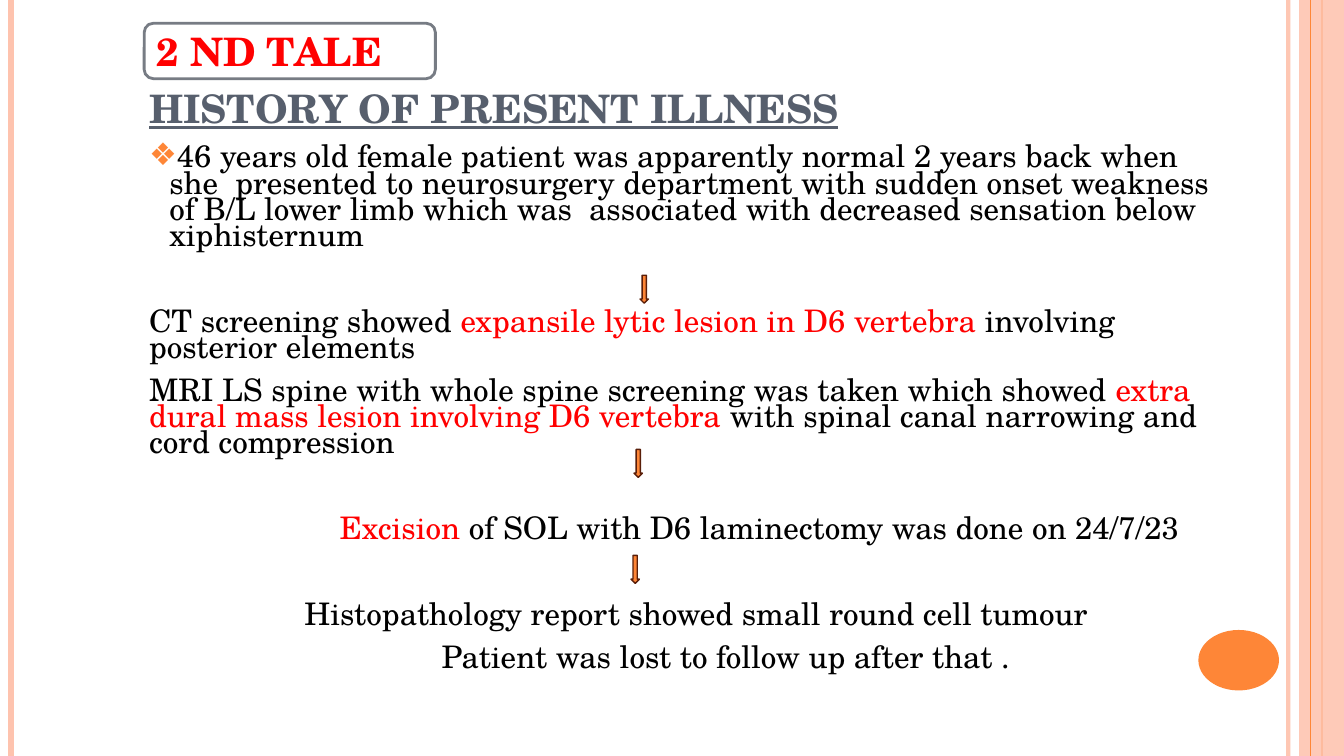
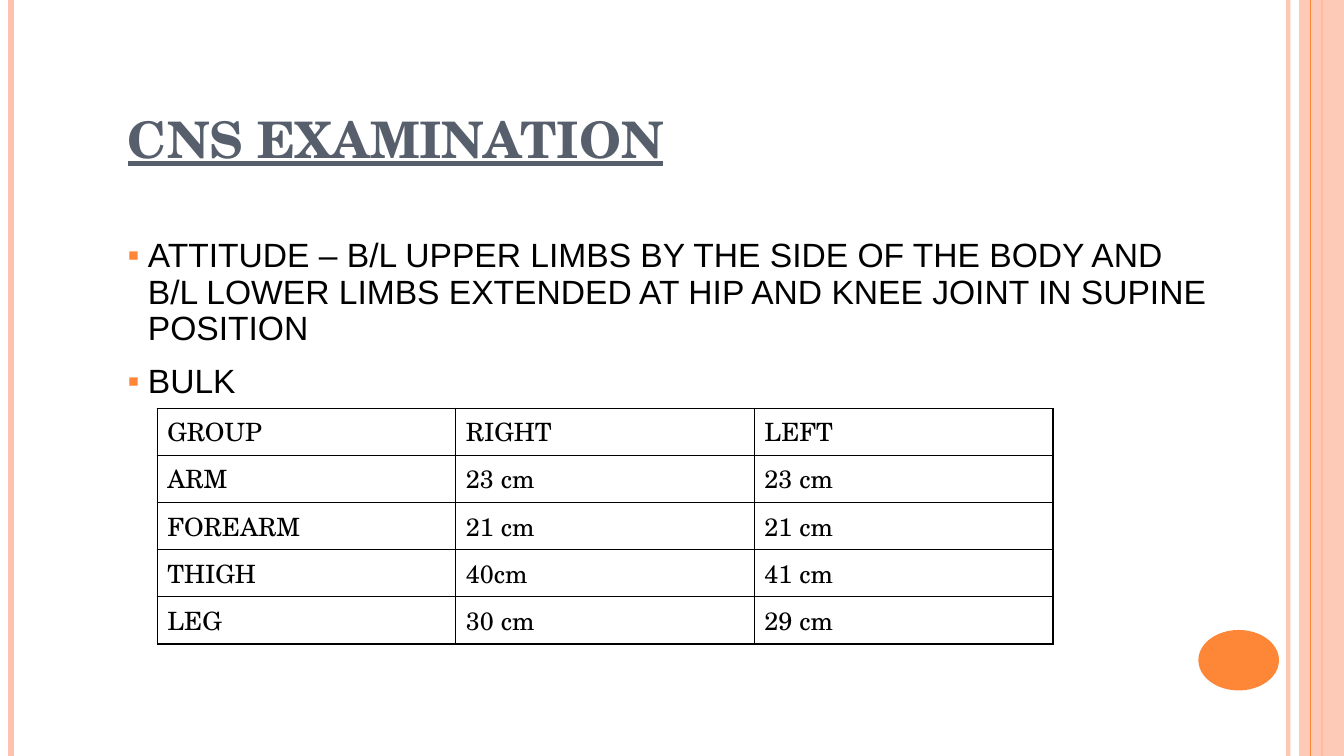
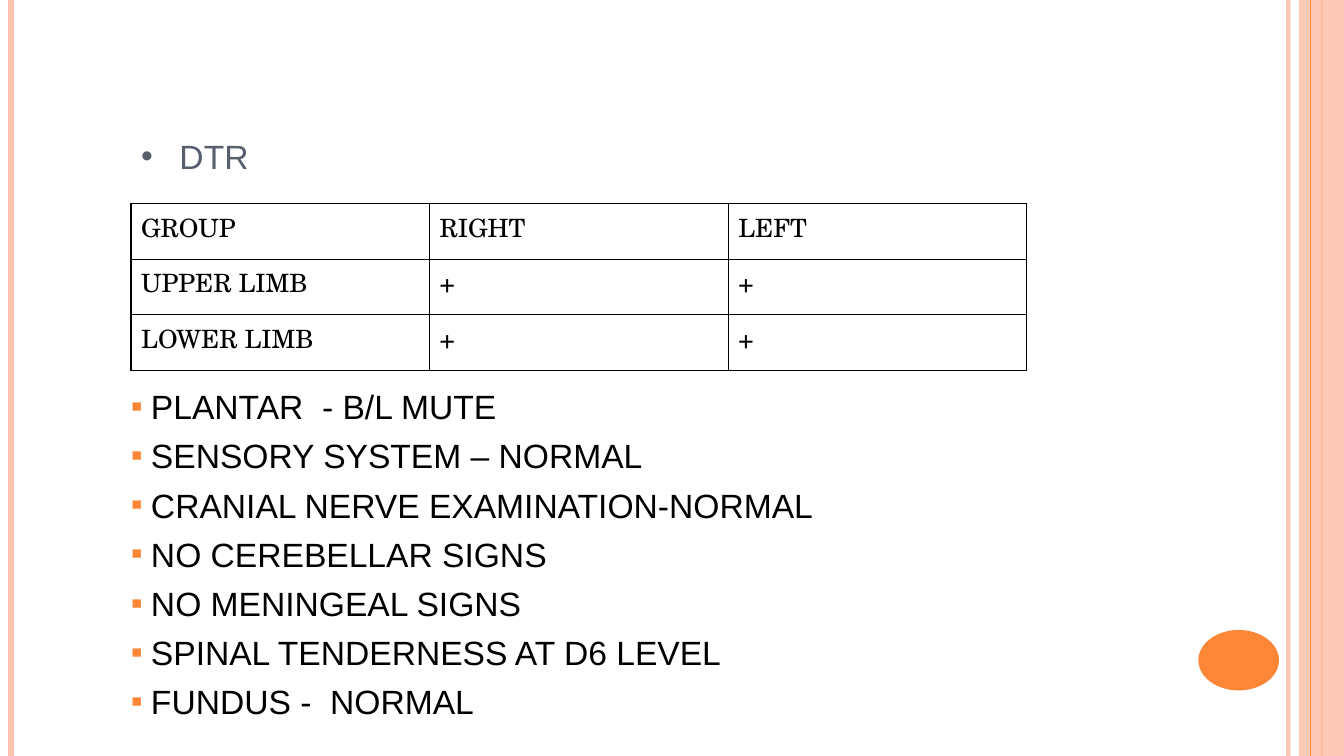
from dataclasses import dataclass

from lxml import etree
from pptx import Presentation
from pptx.dml.color import RGBColor
from pptx.enum import shapes, text
from pptx.oxml import ns
from pptx.util import Pt

SERIF, SANS = "TeX Gyre Schola", "Arial"
ORANGE, PEACH, BROWN = "FE8637", "FEC3AE", "591E09"
SLATE, GREY = "575F6D", "777C84"
BLACK, WHITE, RED = "000000", "FFFFFF", "FF0000"
WIDTH, HEIGHT = 960, 540


@dataclass
class Box:
    x: float
    y: float
    w: float
    h: float


@dataclass
class Rule:
    x: float
    color: str
    width: float
    alpha: int = 100


@dataclass
class Style:
    font: str
    size: float
    color: str = BLACK
    bold: bool = False
    underline: bool = False
    spacing: float = 1.0


@dataclass
class Para:
    runs: list[tuple[str, str]]
    before: float = 12
    indent: float = 0
    bullet: str = ""
    bullet_color: str = ORANGE


RULES = [
    Rule(920.2, PEACH, 3, 93),
    Rule(8, PEACH, 4.5),
    Rule(944, ORANGE, 1.5),
    Rule(936, ORANGE, 0.75),
]
BAND = Box(928, 0, 32, HEIGHT)
DISC = Box(856, 450, 57.6, 43.2)


def rgb(value: str) -> RGBColor:
    return RGBColor.from_string(value)


def sub(parent, tag: str, **attrs: str):
    return etree.SubElement(parent, ns.qn(tag), **attrs)


def set_alpha(sp, percent: int) -> None:
    for clr in sp._element.spPr.iter(ns.qn("a:srgbClr")):
        sub(clr, "a:alpha", val=str(percent * 1000))


def add_shape(s, kind, box: Box, fill: str, line: str = "", width: float = 1):
    sp = s.shapes.add_shape(kind, Pt(box.x), Pt(box.y), Pt(box.w), Pt(box.h))
    sp.shadow.inherit = False
    sp.fill.solid()
    sp.fill.fore_color.rgb = rgb(fill)
    if line:
        sp.line.color.rgb = rgb(line)
        sp.line.width = Pt(width)
    else:
        sp.line.fill.background()
    return sp


def add_rule(s, rule: Rule) -> None:
    ln = s.shapes.add_connector(
        shapes.MSO_CONNECTOR.STRAIGHT, Pt(rule.x), Pt(0), Pt(rule.x), Pt(HEIGHT))
    ln.line.color.rgb = rgb(rule.color)
    ln.line.width = Pt(rule.width)
    if rule.alpha < 100:
        set_alpha(ln, rule.alpha)
    sub(ln._element.spPr, "a:effectLst")


def add_frame(s) -> None:
    for rule in RULES[:3]:
        add_rule(s, rule)
    band = add_shape(s, shapes.MSO_SHAPE.RECTANGLE, BAND, PEACH)
    set_alpha(band, 87)
    add_rule(s, RULES[3])
    add_shape(s, shapes.MSO_SHAPE.OVAL, DISC, ORANGE)


def format_paragraph(p, style: Style) -> None:
    p.alignment = text.PP_ALIGN.LEFT
    p.line_spacing = style.spacing
    p.font.name = style.font
    p.font.size = Pt(style.size)
    p.font.bold = style.bold
    p.font.underline = style.underline
    p.font.color.rgb = rgb(style.color)


def write(tf, paras: list[Para], style: Style) -> None:
    tf.word_wrap = True
    tf.auto_size = text.MSO_AUTO_SIZE.NONE
    for i, para in enumerate(paras):
        p = tf.add_paragraph() if i else tf.paragraphs[0]
        p.space_before = Pt(para.before if i else 0)
        pPr = p._p.get_or_add_pPr()
        pPr.set("marL", str(Pt(para.indent)))
        if para.bullet:
            pPr.set("indent", str(-Pt(para.indent)))
            sub(sub(pPr, "a:buClr"), "a:srgbClr", val=para.bullet_color)
            sub(pPr, "a:buFont", typeface=SANS)
            sub(pPr, "a:buChar", char=para.bullet)
        else:
            pPr.set("indent", "0")
            sub(pPr, "a:buNone")
        format_paragraph(p, style)
        for words, color in para.runs:
            r = p.add_run()
            r.text = words
            if color != style.color:
                r.font.color.rgb = rgb(color)


def add_slide(prs, box: Box, title: Para, style: Style):
    s = prs.slides.add_slide(prs.slide_layouts[5])
    add_frame(s)
    sp = s.shapes.title
    sp.left, sp.top, sp.width, sp.height = Pt(box.x), Pt(box.y), Pt(box.w), Pt(box.h)
    write(sp.text_frame, [title], style)
    sp.text_frame.vertical_anchor = text.MSO_ANCHOR.MIDDLE
    return s


def add_body(s, box: Box, paras: list[Para], style: Style) -> None:
    sp = s.shapes.add_textbox(Pt(box.x), Pt(box.y), Pt(box.w), Pt(box.h))
    write(sp.text_frame, paras, style)


def square_bullets(lines: list[str]) -> list[Para]:
    return [Para([(line, BLACK)], indent=14.4, bullet="▪") for line in lines]


def add_table(s, x: float, y: float, row_h: float, rows: list[list[str]]) -> None:
    col_w = 213.3
    cols = len(rows[0])
    table = s.shapes.add_table(
        len(rows), cols, Pt(x), Pt(y), Pt(col_w * cols), Pt(row_h * len(rows))).table
    table.first_row = table.horz_banding = False
    for col in table.columns:
        col.width = Pt(col_w)
    for row, values in zip(table.rows, rows):
        row.height = Pt(row_h)
        for cell, value in zip(row.cells, values):
            tcPr = cell._tc.get_or_add_tcPr()
            for side in ("a:lnL", "a:lnR", "a:lnT", "a:lnB"):
                ln = sub(tcPr, side, w=str(Pt(1)))
                sub(sub(ln, "a:solidFill"), "a:srgbClr", val=BLACK)
            cell.fill.background()
            cell.text = value
            format_paragraph(cell.text_frame.paragraphs[0], Style(SERIF, 18))


def history_slide(prs) -> None:
    s = add_slide(prs, Box(99.4, 56.2, 602, 45.4),
                  Para([("HISTORY OF PRESENT ILLNESS", SLATE)]),
                  Style(SERIF, 28, SLATE, True, True, 0.9))
    step = 42.8
    paras = [
        Para([("46 years old female patient was apparently normal 2 years back when "
               "she  presented to neurosurgery department with sudden onset weakness "
               "of B/L lower limb which was  associated with decreased sensation below "
               "xiphisternum", BLACK)], indent=14.4, bullet="❖"),
        Para([("CT screening showed ", BLACK),
              ("expansile lytic lesion in D6 vertebra ", RED),
              ("involving posterior elements", BLACK)], before=step),
        Para([("MRI LS spine with whole spine screening was taken which showed ", BLACK),
              ("extra dural mass lesion involving D6 vertebra ", RED),
              ("with spinal canal narrowing and cord compression", BLACK)]),
        Para([("Excision ", RED),
              ("of SOL with D6 laminectomy was done on 24/7/23", BLACK)],
             before=step, indent=136),
        Para([("Histopathology report showed small round cell tumour", BLACK)],
             before=step, indent=111),
        Para([("Patient was lost to follow up after that .", BLACK)], indent=209),
    ]
    add_body(s, Box(99.4, 101.5, 790.6, 412.6), paras, Style(SERIF, 22.2, spacing=0.7))
    for x, y in ((457.2, 196.6), (452.9, 321), (450.7, 396.7)):
        add_shape(s, shapes.MSO_SHAPE.DOWN_ARROW, Box(x, y, 6, 20), ORANGE, BROWN)
    label = add_shape(s, shapes.MSO_SHAPE.ROUNDED_RECTANGLE,
                      Box(103, 16.6, 208, 39.6), WHITE, GREY, 2)
    write(label.text_frame, [Para([("2 ND TALE", RED)])], Style(SERIF, 28, RED, True))
    label.text_frame.vertical_anchor = text.MSO_ANCHOR.MIDDLE


def examination_slide(prs) -> None:
    s = add_slide(prs, Box(84.2, 38.2, 792, 126.7),
                  Para([("CNS EXAMINATION", SLATE)]),
                  Style(SERIF, 36, SLATE, True, True, 0.9))
    add_body(s, Box(84.2, 167, 792, 319), square_bullets([
        "ATTITUDE – B/L UPPER LIMBS BY THE SIDE OF THE BODY AND B/L LOWER LIMBS "
        "EXTENDED AT HIP AND KNEE JOINT IN SUPINE POSITION",
        "BULK",
    ]), Style(SANS, 24, spacing=0.9))
    add_table(s, 112.3, 291.6, 33.7, [
        ["GROUP", "RIGHT", "LEFT"],
        ["ARM", "23 cm", "23 cm"],
        ["FOREARM", "21 cm", "21 cm"],
        ["THIGH", "40cm", "41 cm"],
        ["LEG", "30 cm", "29 cm"],
    ])


def reflex_slide(prs) -> None:
    s = add_slide(prs, Box(93.6, 97.2, 782.6, 31.7),
                  Para([("DTR", SLATE)], indent=27.4, bullet="•", bullet_color=SLATE),
                  Style(SANS, 24, SLATE, spacing=0.9))
    add_body(s, Box(86.4, 278, 792, 234), square_bullets([
        "PLANTAR  - B/L MUTE",
        "SENSORY SYSTEM – NORMAL",
        "CRANIAL NERVE EXAMINATION-NORMAL",
        "NO CEREBELLAR SIGNS",
        "NO MENINGEAL SIGNS",
        "SPINAL TENDERNESS AT D6 LEVEL",
        "FUNDUS -  NORMAL",
    ]), Style(SANS, 24, spacing=0.8))
    add_table(s, 93.6, 145.6, 39.6, [
        ["GROUP", "RIGHT", "LEFT"],
        ["UPPER LIMB", "+", "+"],
        ["LOWER LIMB", "+", "+"],
    ])


def main() -> None:
    prs = Presentation()
    prs.slide_width, prs.slide_height = Pt(WIDTH), Pt(HEIGHT)
    history_slide(prs)
    examination_slide(prs)
    reflex_slide(prs)
    prs.save("out.pptx")


if __name__ == "__main__":
    main()
